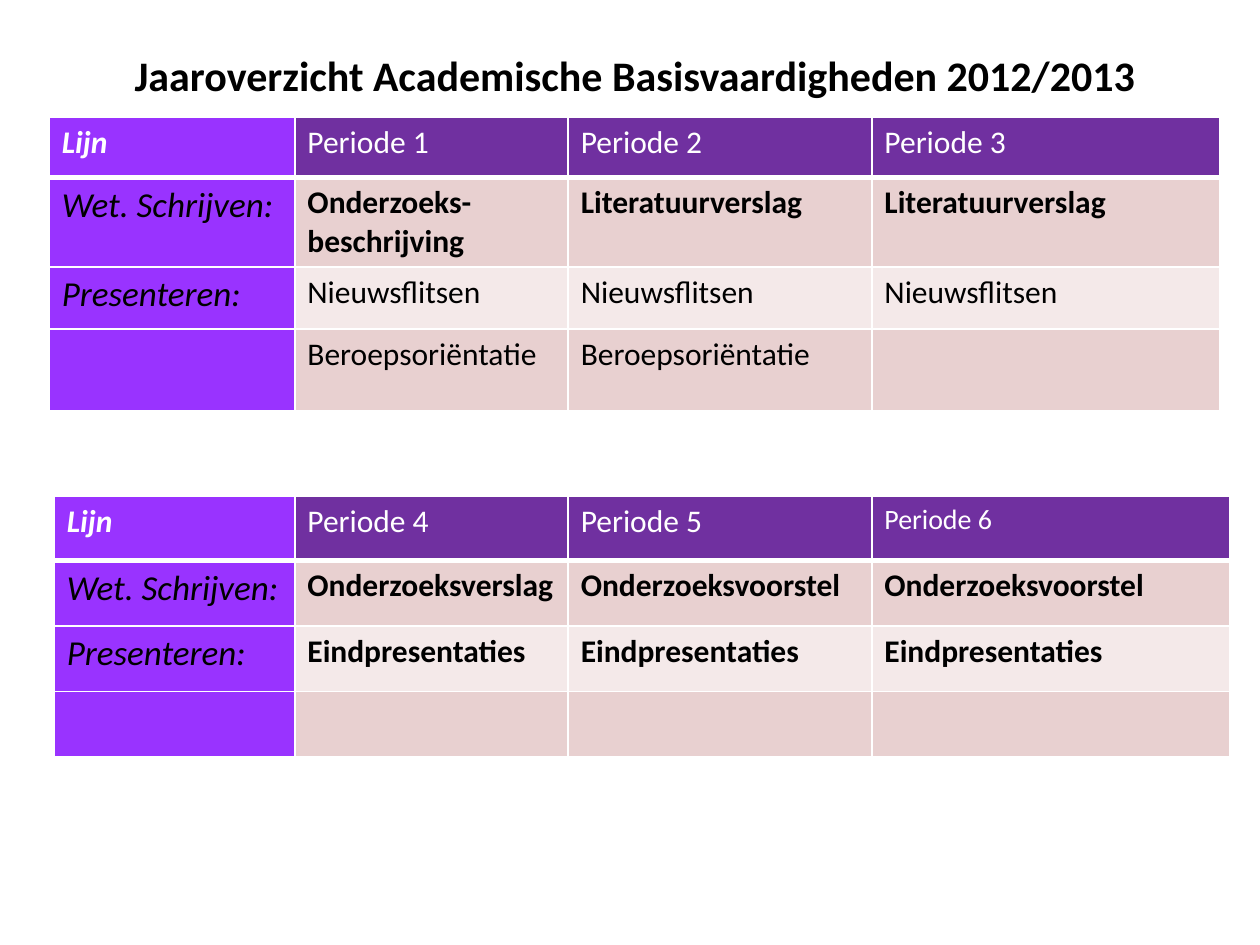
from dataclasses import dataclass
from itertools import pairwise

from lxml.etree import SubElement
from pptx import Presentation
from pptx.dml.color import RGBColor
from pptx.enum.text import MSO_ANCHOR, MSO_AUTO_SIZE, PP_ALIGN
from pptx.oxml.ns import qn
from pptx.util import Inches, Pt

WIDTH, HEIGHT = Inches(10), Inches(7.5)
WHITE, BLACK = "FFFFFF", "000000"
VIOLET, PURPLE, ROSE, PALE_ROSE = "9933FF", "7030A0", "E8D0D0", "F4E9E9"
PERIOD_EDGES = (23.4, 45.1, 69.2)

HEADING = {"size": Pt(24), "bold": True, "italic": False}
CORNER = {"size": Pt(18), "bold": True, "italic": True}
LINE_NAME = {"size": Pt(20), "bold": False, "italic": True}
PLAIN = {"size": Pt(18), "bold": False, "italic": False}
STRONG = PLAIN | {"bold": True}
SMALL = PLAIN | {"size": Pt(16)}


@dataclass
class Row:
    height: float
    texts: tuple[str, ...]
    style: dict


@dataclass
class Overview:
    left: float
    top: float
    right: float
    rows: tuple[Row, ...]


FIRST_HALF = Overview(3.9, 12.4, 96.8, (
    Row(6.4, ("Lijn", "Periode 1", "Periode 2", "Periode 3"), PLAIN),
    Row(9.47, ("Wet. Schrijven:", "Onderzoeks-\nbeschrijving",
               "Literatuurverslag", "Literatuurverslag"), STRONG),
    Row(6.53, ("Presenteren:", *["Nieuwsflitsen"] * 3), PLAIN),
    Row(8.67, ("", "Beroepsoriëntatie", "Beroepsoriëntatie", ""), PLAIN),
))
SECOND_HALF = Overview(4.3, 52.53, 97.6, (
    Row(6.8, ("Lijn", "Periode 4", "Periode 5", "Periode 6"), PLAIN),
    Row(6.93, ("Wet. Schrijven:", "Onderzoeksverslag",
               "Onderzoeksvoorstel", "Onderzoeksvoorstel"), STRONG),
    Row(6.93, ("Presenteren:", *["Eindpresentaties"] * 3), STRONG),
    Row(6.93, ("", "", "", ""), PLAIN),
))


def across(percent: float) -> int:
    return round(WIDTH * percent / 100)


def down(percent: float) -> int:
    return round(HEIGHT * percent / 100)


def color(hex_code: str) -> RGBColor:
    return RGBColor.from_string(hex_code)


def format_text(frame, style: dict, hex_code: str) -> None:
    for paragraph in frame.paragraphs:
        for run in paragraph.runs:
            for name, value in (style | {"name": "Calibri"}).items():
                setattr(run.font, name, value)
            run.font.color.rgb = color(hex_code)


def draw_borders(cell, bottom_width: int) -> None:
    properties = cell._tc.get_or_add_tcPr()
    widths = {"a:lnL": 1, "a:lnR": 1, "a:lnT": 1, "a:lnB": bottom_width}
    for tag, width in widths.items():
        border = SubElement(properties, qn(tag), w=str(Pt(width)))
        SubElement(SubElement(border, qn("a:solidFill")), qn("a:srgbClr"), val=WHITE)


def cell_fill(row: int, column: int) -> str:
    if column == 0:
        return VIOLET
    if row == 0:
        return PURPLE
    return ROSE if row % 2 else PALE_ROSE


def cell_style(row: int, column: int, text: str, row_style: dict) -> dict:
    if column == 0:
        return LINE_NAME if row else CORNER
    return SMALL if text == "Periode 6" else row_style


def draw_overview(slide, overview: Overview) -> None:
    edges = (overview.left, *PERIOD_EDGES, overview.right)
    height = sum(row.height for row in overview.rows)
    table = slide.shapes.add_table(
        len(overview.rows), len(edges) - 1, across(overview.left), down(overview.top),
        across(overview.right - overview.left), down(height)).table
    for column, (start, end) in zip(table.columns, pairwise(edges)):
        column.width = across(end - start)
    for r, row in enumerate(overview.rows):
        table.rows[r].height = down(row.height)
        for c, text in enumerate(row.texts):
            cell = table.cell(r, c)
            cell.text = text
            draw_borders(cell, 1 if r else 3)
            cell.fill.solid()
            cell.fill.fore_color.rgb = color(cell_fill(r, c))
            format_text(cell.text_frame, cell_style(r, c, text, row.style),
                        BLACK if r else WHITE)


def draw_heading(slide, text: str) -> None:
    heading = slide.shapes.title
    place = {"left": across(3.9), "top": down(4.53),
             "width": across(93), "height": down(6.67)}
    for name, value in place.items():
        setattr(heading, name, value)
    frame = heading.text_frame
    frame.text = text
    layout = {"word_wrap": True, "auto_size": MSO_AUTO_SIZE.SHAPE_TO_FIT_TEXT,
              "vertical_anchor": MSO_ANCHOR.TOP}
    for name, value in layout.items():
        setattr(frame, name, value)
    frame.paragraphs[0].alignment = PP_ALIGN.CENTER
    format_text(frame, HEADING, BLACK)


def main() -> None:
    presentation = Presentation()
    presentation.slide_width, presentation.slide_height = WIDTH, HEIGHT
    slide = presentation.slides.add_slide(presentation.slide_layouts[5])
    for overview in (FIRST_HALF, SECOND_HALF):
        draw_overview(slide, overview)
    draw_heading(slide, "Jaaroverzicht Academische Basisvaardigheden 2012/2013")
    presentation.save("out.pptx")


if __name__ == "__main__":
    main()
